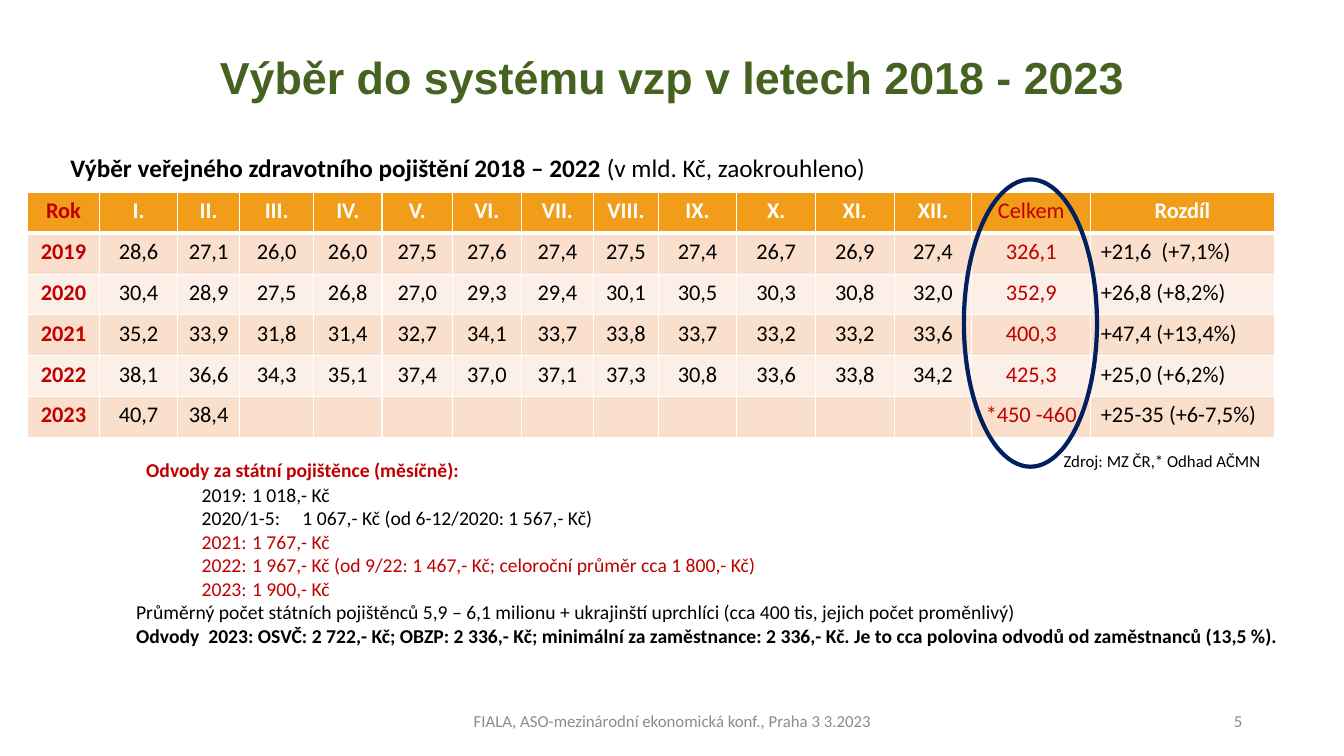
import dataclasses

import lxml.etree
import pptx
import pptx.dml.color
import pptx.enum.shapes
import pptx.enum.text
import pptx.oxml.ns
import pptx.util

Inches = pptx.util.Inches
Pt = pptx.util.Pt
qn = pptx.oxml.ns.qn
ALIGN = pptx.enum.text.PP_ALIGN
ANCHOR = pptx.enum.text.MSO_ANCHOR

COLORS = {
    "title": "466221",
    "header": "F19D19",
    "band_dark": "FADFCC",
    "band_light": "FCEFE8",
    "red": "C00000",
    "navy": "002060",
    "grey": "8C8C8C",
    "black": "000000",
    "white": "FFFFFF",
}


@dataclasses.dataclass
class Label:
    box: tuple[float, float, float, float]
    runs: list[tuple[str, bool]]
    size: int = 12
    color: str = "black"
    align: ALIGN = ALIGN.LEFT
    anchor: ANCHOR = ANCHOR.TOP


@dataclasses.dataclass
class Line:
    text: str
    indent: float
    color: str = "black"
    bold: bool = False
    after: int = 0


HEADER = ["Rok", "I.", "II.", "III.", "IV.", "V.", "VI.", "VII.", "VIII.", "IX.", "X.",
          "XI.", "XII.", "Celkem", "Rozdíl"]
MONTHS = {
    "2019": "28,6 27,1 26,0 26,0 27,5 27,6 27,4 27,5 27,4 26,7 26,9 27,4",
    "2020": "30,4 28,9 27,5 26,8 27,0 29,3 29,4 30,1 30,5 30,3 30,8 32,0",
    "2021": "35,2 33,9 31,8 31,4 32,7 34,1 33,7 33,8 33,7 33,2 33,2 33,6",
    "2022": "38,1 36,6 34,3 35,1 37,4 37,0 37,1 37,3 30,8 33,6 33,8 34,2",
    "2023": "40,7 38,4",
}
TOTALS = [
    ("326,1", "+21,6  (+7,1%)"),
    ("352,9", "+26,8 (+8,2%)"),
    ("400,3", "+47,4 (+13,4%)"),
    ("425,3", "+25,0 (+6,2%)"),
    ("*450 -460", "+25-35 (+6-7,5%)"),
]
WIDTHS = [0.72, 0.77, 0.62, 0.73, 0.68, 0.7, 0.68, 0.72, 0.64, 0.78, 0.78, 0.78, 0.77,
          1.18, 1.82]
TOTAL_COL, CHANGE_COL = 13, 14

LABELS = [
    Label((0.6, 1.46, 8.16, 0.4),
          [("Výběr veřejného zdravotního pojištění 2018 – 2022 ", True),
           ("(v mld. Kč, zaokrouhleno)", False)], size=18),
    Label((10.45, 4.42, 2.23, 0.3), [("Zdroj: MZ ČR,* Odhad AČMN", False)]),
    Label((4.42, 6.95, 4.5, 0.4),
          [("FIALA, ASO-mezinárodní ekonomická konf., Praha 3 3.2023", False)],
          color="grey", align=ALIGN.CENTER, anchor=ANCHOR.MIDDLE),
    Label((9.42, 6.95, 3, 0.4), [("5", False)],
          color="grey", align=ALIGN.RIGHT, anchor=ANCHOR.MIDDLE),
]

PAYMENTS = [
    Line("Odvody za státní pojištěnce (měsíčně):", 0.45, "red", True, after=1),
    Line("2019:\t1 018,- Kč", 1),
    Line("2020/1-5:\t1 067,- Kč (od 6-12/2020: 1 567,- Kč)", 1),
    Line("2021:\t1 767,- Kč", 1, "red"),
    Line("2022:\t1 967,- Kč (od 9/22: 1 467,- Kč; celoroční průměr cca 1 800,- Kč)", 1, "red"),
    Line("2023:\t1 900,- Kč", 1, "red"),
    Line("Průměrný počet státních pojištěnců 5,9 – 6,1 milionu + ukrajinští uprchlíci "
         "(cca 400 tis, jejich počet proměnlivý)", 0.35),
    Line("Odvody  2023: OSVČ: 2 722,- Kč; OBZP: 2 336,- Kč; minimální za zaměstnance: "
         "2 336,- Kč. Je to cca polovina odvodů od zaměstnanců (13,5 %).", 0.35, bold=True),
]
AMOUNT_TAB = 3


def rgb(name: str) -> pptx.dml.color.RGBColor:
    return pptx.dml.color.RGBColor.from_string(COLORS[name])


def add_run(p, text: str, *, size: int, color: str = "black", bold: bool = False,
            font: str = "Calibri") -> None:
    r = p.add_run()
    r.text = text
    r.font.name = font
    r.font.size = Pt(size)
    r.font.bold = bold
    r.font.color.rgb = rgb(color)


def place(sp, left: float, top: float, width: float, height: float) -> None:
    sp.left, sp.top = Inches(left), Inches(top)
    sp.width, sp.height = Inches(width), Inches(height)


def add_label(s, label: Label) -> None:
    tf = s.shapes.add_textbox(*map(Inches, label.box)).text_frame
    tf.word_wrap = True
    tf.vertical_anchor = label.anchor
    p = tf.paragraphs[0]
    p.alignment = label.align
    for text, bold in label.runs:
        add_run(p, text, size=label.size, color=label.color, bold=bold)


def fill_title(s) -> None:
    sp = s.shapes.title
    place(sp, 0.92, 0.4, 11.5, 0.78)
    tf = sp.text_frame
    tf.auto_size = pptx.enum.text.MSO_AUTO_SIZE.NONE
    tf.vertical_anchor = ANCHOR.MIDDLE
    p = tf.paragraphs[0]
    p.alignment = ALIGN.CENTER
    p.line_spacing = 0.9
    add_run(p, "Výběr do systému vzp v letech 2018 - 2023", size=32, color="title",
            bold=True, font="Arial")


def fill_payments(s) -> None:
    sp = s.placeholders[1]
    place(sp, 0.9, 4.49, 11.96, 2)
    tf = sp.text_frame
    tf.auto_size = pptx.enum.text.MSO_AUTO_SIZE.NONE
    for i, line in enumerate(PAYMENTS):
        p = tf.add_paragraph() if i else tf.paragraphs[0]
        p.space_before, p.space_after = Pt(0), Pt(line.after)
        p_pr = p._p.get_or_add_pPr()
        p_pr.set("marL", str(Inches(line.indent)))
        p_pr.set("indent", "0")
        lxml.etree.SubElement(p_pr, qn("a:buNone"))
        tabs = lxml.etree.SubElement(p_pr, qn("a:tabLst"))
        lxml.etree.SubElement(tabs, qn("a:tab"), pos=str(Inches(AMOUNT_TAB)), algn="l")
        add_run(p, line.text, size=14, color=line.color, bold=line.bold)


def set_borders(cell, row: int) -> None:
    """White cell borders, with a thicker rule between header and body."""
    heavy = {(0, "B"), (1, "T")}
    tc_pr = cell._tc.get_or_add_tcPr()
    for side in "LRTB":
        width = Pt(3 if (row, side) in heavy else 1)
        ln = lxml.etree.SubElement(tc_pr, qn(f"a:ln{side}"), w=str(width))
        fill = lxml.etree.SubElement(ln, qn("a:solidFill"))
        lxml.etree.SubElement(fill, qn("a:srgbClr"), val=COLORS["white"])


def text_color(row: int, col: int) -> str:
    if col in (0, TOTAL_COL):
        return "red"
    return "black" if row else "white"


def add_collection_table(s) -> None:
    rows = [HEADER]
    for (year, months), totals in zip(MONTHS.items(), TOTALS):
        values = months.split()
        rows.append([year, *values, *[""] * (12 - len(values)), *totals])
    table = s.shapes.add_table(len(rows), len(HEADER), Inches(0.27), Inches(1.91),
                               Inches(sum(WIDTHS)), Inches(2.43)).table
    for column, width in zip(table.columns, WIDTHS):
        column.width = Inches(width)
    for i, row in enumerate(rows):
        band = "header" if i == 0 else ("band_light", "band_dark")[i % 2]
        for j, text in enumerate(row):
            cell = table.cell(i, j)
            set_borders(cell, i)
            cell.fill.solid()
            cell.fill.fore_color.rgb = rgb(band)
            if text:
                p = cell.text_frame.paragraphs[0]
                p.alignment = ALIGN.LEFT if i and j == CHANGE_COL else ALIGN.CENTER
                add_run(p, text, size=16, color=text_color(i, j),
                        bold=j == 0 or (i == 0 and j != TOTAL_COL))


def add_total_ring(s) -> None:
    sp = s.shapes.add_shape(pptx.enum.shapes.MSO_SHAPE.OVAL, Inches(9.56), Inches(1.78),
                            Inches(1.32), Inches(2.85))
    sp.shadow.inherit = False
    sp.fill.background()
    sp.line.color.rgb = rgb("navy")
    sp.line.width = Pt(3)


def main() -> None:
    prs = pptx.Presentation()
    prs.slide_width, prs.slide_height = Inches(13.33), Inches(7.5)
    s = prs.slides.add_slide(prs.slide_layouts[1])
    fill_title(s)
    fill_payments(s)
    add_collection_table(s)
    add_total_ring(s)
    for label in LABELS:
        add_label(s, label)
    prs.save("out.pptx")


if __name__ == "__main__":
    main()
